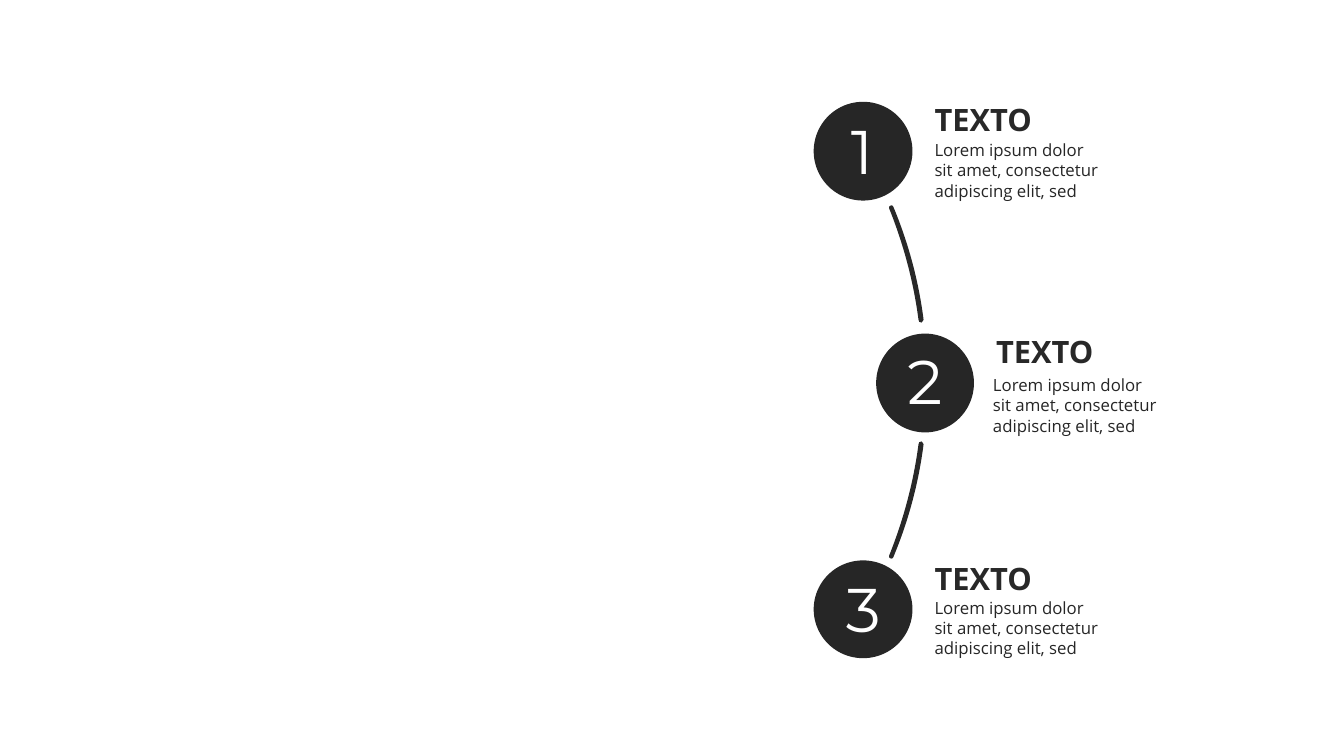
from dataclasses import dataclass

from lxml.etree import SubElement
from pptx import Presentation
from pptx.dml.color import RGBColor
from pptx.enum.shapes import MSO_SHAPE
from pptx.oxml.ns import qn
from pptx.shapes.autoshape import Shape
from pptx.slide import Slide
from pptx.util import Inches, Pt

Point = tuple[float, float]
Size = tuple[float, float]

CIRCLE_COLOR = "262626"
HEADING_COLOR = "282828"
DESCRIPTION = "Lorem ipsum dolor sit amet, consectetur adipiscing elit, sed"
ARC_MIRROR_SUM = 7.58  # upper and lower y of the two arcs add up to this

ARC_START: Point = (9.14, 3.2)
ARC_CURVES: list[tuple[Point, Point, Point]] = [
    ((9.12, 3.2), (9.11, 3.19), (9.11, 3.17)),
    ((9.06, 2.79), (8.96, 2.42), (8.82, 2.07)),
    ((8.81, 2.06), (8.82, 2.04), (8.83, 2.04)),
    ((8.84, 2.03), (8.86, 2.04), (8.86, 2.05)),
    ((9.01, 2.41), (9.11, 2.78), (9.16, 3.17)),
    ((9.16, 3.18), (9.15, 3.19), (9.14, 3.2)),
]


@dataclass(frozen=True)
class Step:
    number: str
    circle: Point
    circle_size: Size
    digit: Point
    digit_width: float
    heading: Point
    heading_width: float
    description: Point


STEPS = [
    Step("1", (8.07, 1.01), (0.98, 0.98), (8.44, 1.12), 0.61, (9.27, 1.0), 1.72, (9.17, 1.34)),
    Step("2", (8.69, 3.31), (0.97, 0.98), (9.0, 3.4), 0.74, (9.88, 3.3), 1.52, (9.75, 3.67)),
    Step("3", (8.07, 5.56), (0.98, 0.97), (8.39, 5.66), 0.73, (9.27, 5.55), 1.62, (9.17, 5.88)),
]


def paint(shape: Shape, color: str) -> None:
    """Give the shape a plain fill with no outline or shadow."""
    shape.fill.solid()
    shape.fill.fore_color.rgb = RGBColor.from_string(color)
    shape.line.fill.background()
    shape.shadow.inherit = False


def add_text(slide: Slide, text: str, position: Point, width: float, height: float, *,
             size: float, font: str, color: str, bold: bool = False,
             horizontal_inset: float = 0, vertical_inset: float = 0) -> None:
    left, top = position
    box = slide.shapes.add_textbox(Inches(left), Inches(top), Inches(width), Inches(height))
    frame = box.text_frame
    frame.word_wrap = True
    frame.margin_left = frame.margin_right = Inches(horizontal_inset)
    frame.margin_top = frame.margin_bottom = Inches(vertical_inset)
    run = frame.paragraphs[0].add_run()
    run.text = text
    run.font.size = Pt(size)
    run.font.name = font
    run.font.bold = bold
    run.font.color.rgb = RGBColor.from_string(color)


def add_circle(slide: Slide, step: Step) -> None:
    left, top = step.circle
    width, height = step.circle_size
    circle = slide.shapes.add_shape(MSO_SHAPE.OVAL, Inches(left), Inches(top),
                                    Inches(width), Inches(height))
    paint(circle, CIRCLE_COLOR)


def add_arc(slide: Slide, mirrored: bool) -> None:
    """Draw the closed arc band, bending each straight segment into a cubic curve."""
    def place(point: Point) -> tuple[int, int]:
        x, y = point
        return Inches(x), Inches(ARC_MIRROR_SUM - y if mirrored else y)

    builder = slide.shapes.build_freeform(*place(ARC_START))
    builder.add_line_segments([place(curve[-1]) for curve in ARC_CURVES], close=True)
    arc = builder.convert_to_shape()
    paint(arc, HEADING_COLOR)
    for segment, curve in zip(arc.element.xpath(".//a:lnTo"), ARC_CURVES):
        segment.tag = qn("a:cubicBezTo")
        segment.remove(segment[0])
        for x, y in map(place, curve):
            SubElement(segment, qn("a:pt"), x=str(x - arc.left), y=str(y - arc.top))


def main() -> None:
    presentation = Presentation()
    presentation.slide_width = Inches(13.33)
    presentation.slide_height = Inches(7.5)
    slide = presentation.slides.add_slide(presentation.slide_layouts[6])

    for step in STEPS:
        add_text(slide, DESCRIPTION, step.description, 1.85, 0.71, size=12, font="Open Sans",
                 color=CIRCLE_COLOR, horizontal_inset=0.1, vertical_inset=0.05)
    for step in STEPS:
        add_text(slide, "TEXTO", step.heading, step.heading_width, 0.5,
                 size=22, font="Open Sans", color=HEADING_COLOR, bold=True)
    for step in STEPS:
        add_circle(slide, step)
    for mirrored in (False, True):
        add_arc(slide, mirrored)
    for step in STEPS:
        add_text(slide, step.number, step.digit, step.digit_width, 0.91,
                 size=44, font="Montserrat", color="FFFFFF")

    presentation.save("out.pptx")


if __name__ == "__main__":
    main()
